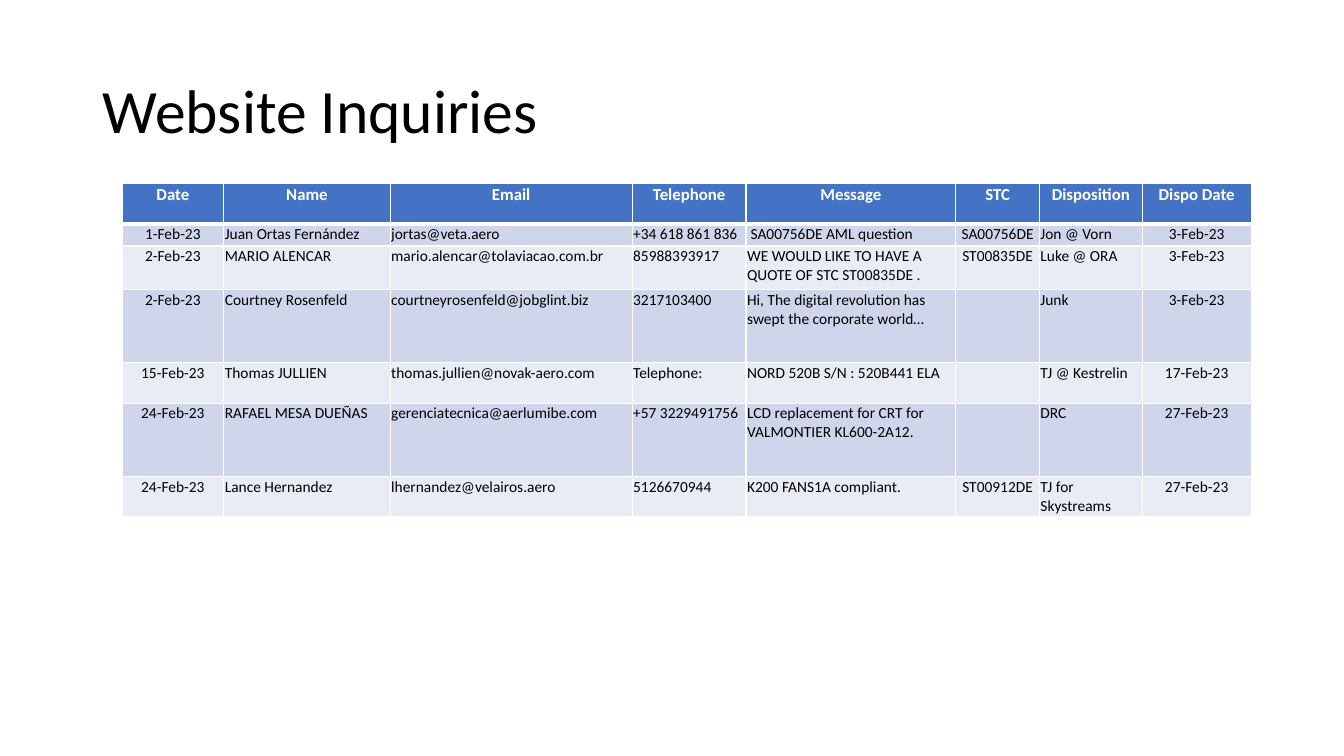
from pptx import Presentation
from pptx.dml.color import RGBColor
from pptx.enum.text import MSO_ANCHOR as Anchor, PP_ALIGN as Align
from pptx.oxml import parse_xml
from pptx.oxml.ns import nsdecls
from pptx.util import Inches, Pt


def color(hex_value):
    return RGBColor.from_string(hex_value)


def add_border(cell, position, side, points):
    line = parse_xml(
        f'<a:{side} {nsdecls("a")} w="{Pt(points)}"><a:solidFill>'
        f'<a:srgbClr val="FFFFFF"/></a:solidFill></a:{side}>')
    cell._tc.get_or_add_tcPr().insert(position, line)


deck = Presentation()
deck.slide_width, deck.slide_height = Inches(13.33), Inches(7.5)
page = deck.slides.add_slide(deck.slide_layouts[6])

# Title
title = page.shapes.add_textbox(Inches(0.92), Inches(0.4), Inches(11.5), Inches(1.45))
frame = title.text_frame
frame.word_wrap = True
frame.vertical_anchor = Anchor.MIDDLE
frame.text = "Website Inquiries"
para = frame.paragraphs[0]
para.line_spacing = 0.9
font = para.runs[0].font
font.name, font.size = "Calibri", Pt(44)
font.color.rgb = color("000000")

# Inquiry data
inquiries = [
    ("Date", "Name", "Email", "Telephone", "Message", "STC", "Disposition", "Dispo Date"),
    ("1-Feb-23", "Juan Ortas Fernández", "jortas@veta.aero", "+34 618 861 836",
     " SA00756DE AML question", "SA00756DE", "Jon @ Vorn", "3-Feb-23"),
    ("2-Feb-23", "MARIO ALENCAR", "mario.alencar@tolaviacao.com.br", "85988393917",
     "WE WOULD LIKE TO HAVE A QUOTE OF STC ST00835DE .", "ST00835DE", "Luke @ ORA", "3-Feb-23"),
    ("2-Feb-23", "Courtney Rosenfeld", "courtneyrosenfeld@jobglint.biz", "3217103400",
     "Hi, The digital revolution has swept the corporate world…", "", "Junk", "3-Feb-23"),
    ("15-Feb-23", "Thomas JULLIEN", "thomas.jullien@novak-aero.com", "Telephone:",
     "NORD 520B S/N : 520B441 ELA", "", "TJ @ Kestrelin", "17-Feb-23"),
    ("24-Feb-23", "RAFAEL MESA DUEÑAS", "gerenciatecnica@aerlumibe.com", "+57 3229491756",
     "LCD replacement for CRT for VALMONTIER KL600-2A12.", "", "DRC", "27-Feb-23"),
    ("24-Feb-23", "Lance Hernandez", "lhernandez@velairos.aero", "5126670944",
     "K200 FANS1A compliant.", "ST00912DE", "TJ for Skystreams", "27-Feb-23"),
]
column_widths = [1.01, 1.65, 2.4, 1.13, 2.08, 0.83, 1.02, 1.08]
row_heights = [0.4, 0.22, 0.43, 0.73, 0.4, 0.73, 0.4]
centered_columns = {"Date", "STC", "Dispo Date"}

# Table grid
table = page.shapes.add_table(
    len(inquiries), len(column_widths), Inches(1.21), Inches(1.82),
    Inches(sum(column_widths)), Inches(sum(row_heights))).table
for column, width in zip(table.columns, column_widths):
    column.width = Inches(width)
for row, height in zip(table.rows, row_heights):
    row.height = Inches(height)

# Table cells
for row_index, inquiry in enumerate(inquiries):
    is_header = row_index == 0
    band = "4472C4" if is_header else ("E9EBF5", "CFD5EA")[row_index % 2]
    for column_index, (heading, text) in enumerate(zip(inquiries[0], inquiry)):
        cell = table.cell(row_index, column_index)
        cell.margin_left = cell.margin_right = cell.margin_top = Inches(0.01)
        cell.margin_bottom = 0
        cell.fill.solid()
        cell.fill.fore_color.rgb = color(band)
        for position, side in enumerate(("lnL", "lnR", "lnT", "lnB")):
            under_header = (is_header and side == "lnB") or (row_index == 1 and side == "lnT")
            add_border(cell, position, side, 3 if under_header else 1)
        cell.text_frame.text = text
        para = cell.text_frame.paragraphs[0]
        if is_header or heading in centered_columns:
            para.alignment = Align.CENTER
        for span in para.runs:
            span.font.name = "Calibri"
            span.font.size = Pt(12 if is_header else 11)
            span.font.bold = is_header
            span.font.color.rgb = color("FFFFFF" if is_header else "000000")

deck.save("out.pptx")
